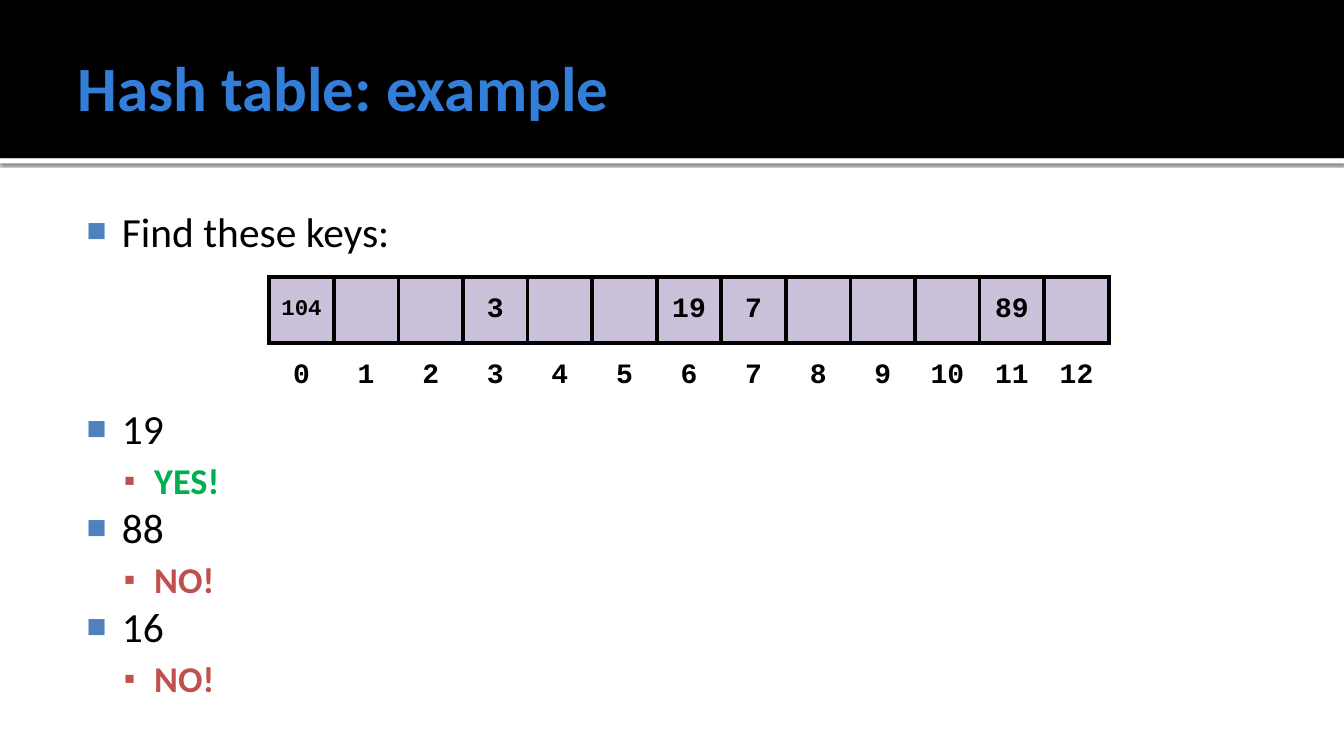
from dataclasses import dataclass

from lxml.etree import SubElement
from pptx import Presentation
from pptx.dml.color import RGBColor
from pptx.enum.shapes import MSO_SHAPE
from pptx.enum.text import MSO_ANCHOR, PP_ALIGN
from pptx.oxml.ns import qn
from pptx.util import Inches, Pt


@dataclass(frozen=True)
class Theme:
    sans: str = "Calibri"
    mono: str = "Courier New"
    black: str = "000000"
    white: str = "FFFFFF"
    title: str = "337ED9"
    blue: str = "4F81BD"
    red: str = "C0504D"
    green: str = "00B050"
    lilac: str = "CCC1DA"
    title_size: float = 45
    key_size: float = 29.6
    reply_size: float = 25.9
    cell_size: float = 20
    small_size: float = 16
    border: float = 3


THEME = Theme()


@dataclass(frozen=True)
class Level:
    mark: str
    mark_color: str
    scale: int
    margin: float
    indent: float
    size: float
    bold: bool


KEY = Level("■", THEME.blue, 80, 0.48, -0.35, THEME.key_size, False)
REPLY = Level("▪", THEME.red, 90, 0.8, -0.3, THEME.reply_size, True)


@dataclass(frozen=True)
class Bullet:
    text: str
    level: Level
    color: str = THEME.black
    before: float = 0


BULLETS = [
    Bullet("Find these keys:", KEY, before=2),
    Bullet("19", KEY, before=105.5),
    Bullet("YES!", REPLY, THEME.green, 4),
    Bullet("88", KEY),
    Bullet("NO!", REPLY, THEME.red, 4),
    Bullet("16", KEY),
    Bullet("NO!", REPLY, THEME.red, 4),
]
SLOTS = 13
STORED = {0: "104", 3: "3", 6: "19", 7: "7", 11: "89"}


def style(para, font: str, size: float, color: str, bold: bool) -> None:
    for run in para.runs:
        run.font.name = font
        run.font.size = Pt(size)
        run.font.bold = bold
        run.font.color.rgb = RGBColor.from_string(color)


def add_band(slide, top: float, height: float, color: str):
    band = slide.shapes.add_shape(
        MSO_SHAPE.RECTANGLE, 0, Inches(top), Inches(13.33), Inches(height))
    band.shadow.inherit = False
    band.fill.solid()
    band.fill.fore_color.rgb = RGBColor.from_string(color)
    band.line.fill.background()
    return band


def add_shadow(shape) -> None:
    effects = shape._element.spPr.find(qn("a:effectLst"))
    shadow = SubElement(effects, qn("a:outerShdw"), blurRad=str(Pt(2.5)),
                        dist=str(Pt(0.8)), dir="5400000", rotWithShape="0")
    color = SubElement(shadow, qn("a:srgbClr"), val=THEME.black)
    SubElement(color, qn("a:alpha"), val="60000")


def add_frame(slide, top: float, height: float, insets: tuple[float, ...]):
    """Add a wrapped text box; insets run left, top, right, bottom."""
    box = slide.shapes.add_textbox(
        Inches(0.67), Inches(top), Inches(12), Inches(height))
    frame = box.text_frame
    frame.word_wrap = True
    (frame.margin_left, frame.margin_top,
     frame.margin_right, frame.margin_bottom) = map(Inches, insets)
    return frame


def add_title(slide, text: str) -> None:
    frame = add_frame(slide, 0.17, 1.37, (0.1, 0.05, 0.05, 0.05))
    frame.vertical_anchor = MSO_ANCHOR.MIDDLE
    frame.text = text
    style(frame.paragraphs[0], THEME.sans, THEME.title_size, THEME.title, True)


def set_mark(para, level: Level) -> None:
    props = para._p.get_or_add_pPr()
    props.set("marL", str(Inches(level.margin)))
    props.set("indent", str(Inches(level.indent)))
    color = SubElement(props, qn("a:buClr"))
    SubElement(color, qn("a:srgbClr"), val=level.mark_color)
    SubElement(props, qn("a:buSzPct"), val=str(level.scale * 1000))
    SubElement(props, qn("a:buFont"), typeface="Arial")
    SubElement(props, qn("a:buChar"), char=level.mark)


def add_bullets(slide, bullets: list[Bullet]) -> None:
    frame = add_frame(slide, 1.94, 5.06, (0.06, 0.1, 0.1, 0.05))
    frame.text = "\n".join(bullet.text for bullet in bullets)
    for para, bullet in zip(frame.paragraphs, bullets):
        level = bullet.level
        para.level = int(level is REPLY)
        para.space_before = Pt(bullet.before)
        set_mark(para, level)
        style(para, THEME.sans, level.size, bullet.color, level.bold)


def set_edges(cell, sides: str, drawn: str) -> None:
    """Draw the named sides of a cell and clear the others."""
    props = cell._tc.get_or_add_tcPr()
    for place, side in enumerate(sides):
        line = props.makeelement(
            qn(f"a:ln{side}"), {"w": str(Pt(THEME.border))})
        props.insert(place, line)
        if side in drawn:
            fill = SubElement(line, qn("a:solidFill"))
            SubElement(fill, qn("a:srgbClr"), val=THEME.black)
        else:
            SubElement(line, qn("a:noFill"))


def fill_cell(cell, text: str, stored: bool) -> None:
    cell.vertical_anchor = MSO_ANCHOR.MIDDLE
    cell.margin_left = cell.margin_right = Inches(0.05)
    if stored:
        cell.fill.solid()
        cell.fill.fore_color.rgb = RGBColor.from_string(THEME.lilac)
    else:
        cell.fill.background()
    set_edges(cell, "LRTB", "LRTB" if stored else "T")
    cell.text_frame.text = text
    para = cell.text_frame.paragraphs[0]
    para.alignment = PP_ALIGN.CENTER
    size = THEME.small_size if len(text) > 2 else THEME.cell_size
    style(para, THEME.mono, size, THEME.black, True)


def add_slots(slide) -> None:
    width = Inches(8.33)
    table = slide.shapes.add_table(
        2, SLOTS, Inches(2.67), Inches(2.75), width, Inches(1.31)).table
    table.first_row = table.horz_banding = False
    table.rows[0].height = Inches(0.65)
    table.rows[1].height = Inches(0.66)
    for slot in range(SLOTS):
        table.columns[slot].width = width // SLOTS
        fill_cell(table.cell(0, slot), STORED.get(slot, ""), True)
        fill_cell(table.cell(1, slot), str(slot), False)


def main() -> None:
    deck = Presentation()
    deck.slide_width, deck.slide_height = Inches(13.33), Inches(7.5)
    slide = deck.slides.add_slide(deck.slide_layouts[6])
    add_shadow(add_band(slide, 1.57, 0.05, THEME.white))
    add_band(slide, 0, 1.57, THEME.black)
    add_title(slide, "Hash table: example")
    add_bullets(slide, BULLETS)
    add_slots(slide)
    deck.save("out.pptx")


if __name__ == "__main__":
    main()
